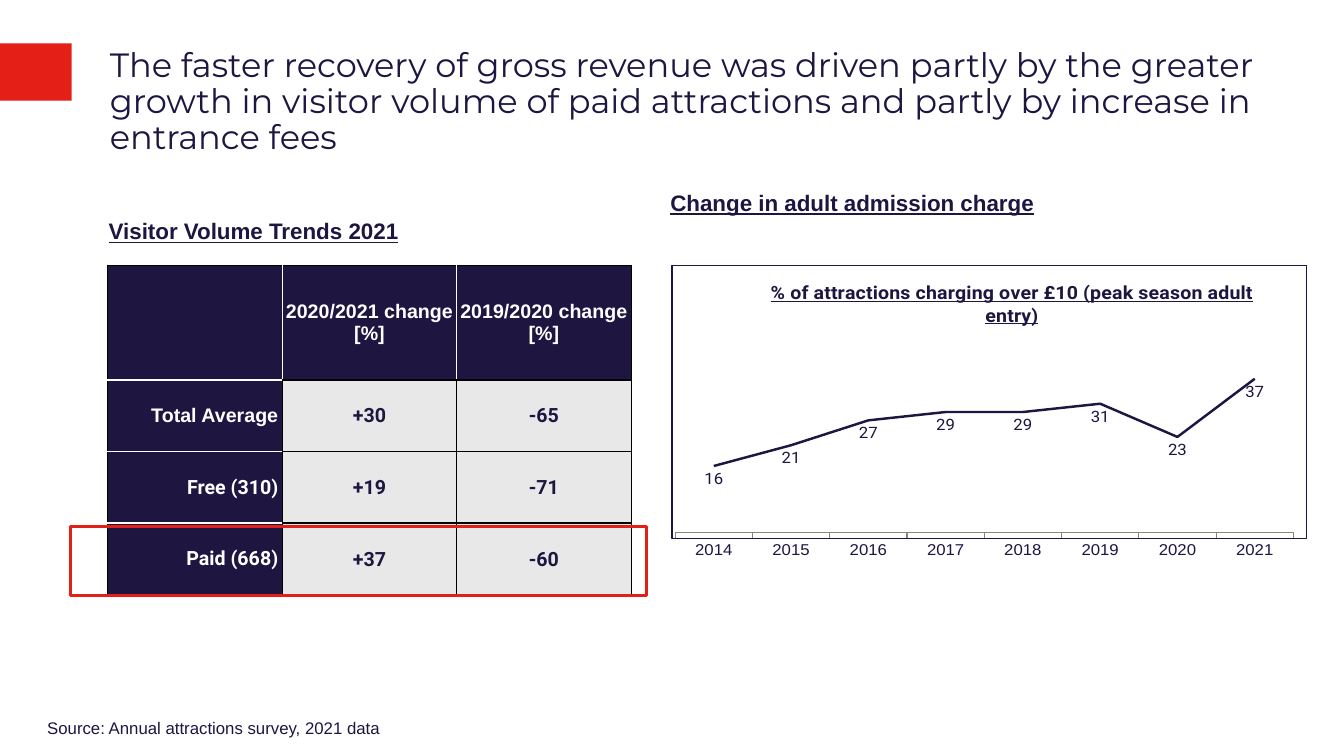
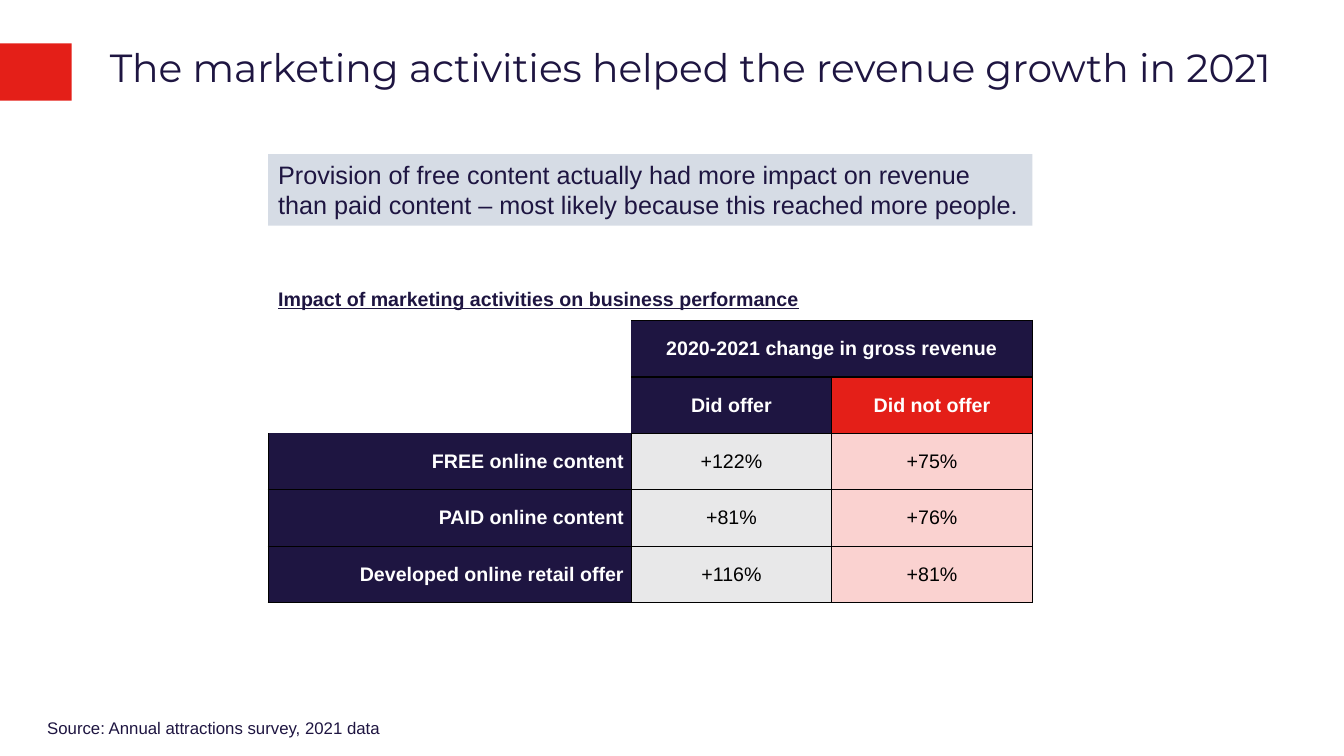
from lxml import etree
from pptx import Presentation
from pptx.chart.data import CategoryChartData
from pptx.dml.color import RGBColor
from pptx.enum.chart import XL_CHART_TYPE, XL_LABEL_POSITION, XL_TICK_MARK
from pptx.enum.shapes import MSO_SHAPE
from pptx.enum.text import MSO_ANCHOR, PP_ALIGN
from pptx.oxml import parse_xml
from pptx.oxml.ns import nsdecls, qn
from pptx.util import Inches, Pt

LEFT, CENTER, RIGHT = PP_ALIGN.LEFT, PP_ALIGN.CENTER, PP_ALIGN.RIGHT
TOP, MIDDLE, BOTTOM = MSO_ANCHOR.TOP, MSO_ANCHOR.MIDDLE, MSO_ANCHOR.BOTTOM
RECTANGLE = MSO_SHAPE.RECTANGLE
LINE_CHART = XL_CHART_TYPE.LINE
BELOW = XL_LABEL_POSITION.BELOW
TICK_OUTSIDE, TICK_NONE = XL_TICK_MARK.OUTSIDE, XL_TICK_MARK.NONE

COLOURS = {
    "navy": "1E1541",
    "red": "E41F18",
    "white": "FFFFFF",
    "black": "000000",
    "grey": "E8E8E9",
    "pink": "FAD2D0",
    "pale blue": "D6DCE5",
    "axis": "868686",
}
CELL_STYLES = {
    "empty": {"fill": None},
    "corner": {"fill": "navy"},
    "head": {"fill": "navy", "colour": "white", "bold": True},
    "red head": {"fill": "red", "colour": "white", "bold": True},
    "side": {"fill": "navy", "colour": "white", "bold": True, "align": RIGHT},
    "strong value": {"fill": "grey", "bold": True, "font": "Roboto"},
    "value": {"fill": "grey", "colour": "black"},
    "pink value": {"fill": "pink", "colour": "black"},
}


def colour_of(name):
    return RGBColor.from_string(COLOURS[name])


def write(frame, text, size=14, font="Arial", colour="navy", bold=False,
          underline=False, align=LEFT, line_spacing=None, before=0, after=0):
    """Fill a text frame, one paragraph for each line of the text."""
    for number, line in enumerate(text.split("\n")):
        paragraph = frame.add_paragraph() if number else frame.paragraphs[0]
        paragraph.alignment = align
        paragraph.line_spacing = line_spacing
        paragraph.space_before, paragraph.space_after = Pt(before), Pt(after)
        run = paragraph.add_run()
        run.text = line
        run.font.name, run.font.size = font, Pt(size)
        run.font.bold, run.font.underline = bold, underline
        run.font.color.rgb = colour_of(colour)


def set_margins(target, margins):
    """Set left, top, right and bottom margins of a text frame or a cell."""
    (target.margin_left, target.margin_top,
     target.margin_right, target.margin_bottom) = map(Inches, margins)


def add_border(cell, side, colour):
    """Draw one side (L, R, T or B) of a cell, or clear it without a colour."""
    properties = cell._tc.get_or_add_tcPr()
    line = etree.SubElement(properties, qn("a:ln" + side), w=str(Pt(1)))
    if colour:
        fill = etree.SubElement(line, qn("a:solidFill"))
        etree.SubElement(fill, qn("a:srgbClr"), val=COLOURS[colour])
    else:
        etree.SubElement(line, qn("a:noFill"))


def set_layout(element, index, **values):
    """Place a chart part by fractions of the chart area."""
    for old in element.findall(qn("c:layout")):
        element.remove(old)
    layout = etree.Element(qn("c:layout"))
    manual = etree.SubElement(layout, qn("c:manualLayout"))
    for name, value in values.items():
        etree.SubElement(manual, qn("c:" + name), val=str(value))
    element.insert(index, layout)


class Deck:
    def __init__(self):
        self.presentation = Presentation()
        self.presentation.slide_width = Inches(13.33)
        self.presentation.slide_height = Inches(7.5)
        self.slide = None

    def new_slide(self, title, title_size, source):
        """Start a slide with its red marker, title and source line."""
        layout = self.presentation.slide_layouts[6]
        self.slide = self.presentation.slides.add_slide(layout)
        self.rectangle(0, 0.43, 0.71, 0.57, fill="red")
        self.text(title, 0.99, 0.43, 12.01, 0.57, size=title_size,
                  font="Montserrat", line_spacing=0.9)
        self.text(source, 0.37, 7.03, 5.9, 0.29, anchor=BOTTOM,
                  margins=(0.1, 0, 0.1, 0), size=12, line_spacing=0.9, before=10)

    def text(self, text, left, top, width, height, anchor=TOP,
             margins=(0.1, 0.05, 0.1, 0.05), **text_format):
        box = self.slide.shapes.add_textbox(
            Inches(left), Inches(top), Inches(width), Inches(height))
        frame = box.text_frame
        frame.word_wrap = True
        frame.vertical_anchor = anchor
        set_margins(frame, margins)
        write(frame, text, **text_format)

    def heading(self, text, left, top, width, height, **text_format):
        self.text(text, left, top, width, height, bold=True, underline=True,
                  **text_format)

    def rectangle(self, left, top, width, height, fill=None, line=None,
                  text=None, **text_format):
        shape = self.slide.shapes.add_shape(
            RECTANGLE, Inches(left), Inches(top), Inches(width), Inches(height))
        shape.shadow.inherit = False
        if fill:
            shape.fill.solid()
            shape.fill.fore_color.rgb = colour_of(fill)
        else:
            shape.fill.background()
        if line:
            shape.line.color.rgb = colour_of(line)
            shape.line.width = Pt(2.25)
        else:
            shape.line.fill.background()
        if text:
            shape.text_frame.word_wrap = True
            shape.text_frame.vertical_anchor = TOP
            write(shape.text_frame, text, **text_format)

    def table(self, left, top, widths, heights, rows, border_rule,
              margins, side_margins):
        """Add a table; each cell is a (text, style name) pair."""
        table = self.slide.shapes.add_table(
            len(heights), len(widths), Inches(left), Inches(top),
            Inches(sum(widths)), Inches(sum(heights))).table
        table.first_row = table.horz_banding = False
        for column, width in zip(table.columns, widths):
            column.width = Inches(width)
        for row, height in zip(table.rows, heights):
            row.height = Inches(height)
        for row, cells in enumerate(rows):
            for column, (text, style) in enumerate(cells):
                cell = table.cell(row, column)
                for side in "LRTB":
                    add_border(cell, side, border_rule(row, column, side))
                text_format = {"align": CENTER, **CELL_STYLES[style]}
                fill = text_format.pop("fill")
                if fill:
                    cell.fill.solid()
                    cell.fill.fore_color.rgb = colour_of(fill)
                else:
                    cell.fill.background()
                cell.vertical_anchor = MIDDLE
                set_margins(cell, side_margins if style == "side" else margins)
                if text:
                    write(cell.text_frame, text, **text_format)
        return table

    def line_chart(self, left, top, width, height, title, categories, values):
        data = CategoryChartData()
        data.categories = categories
        data.add_series("Series 1", values)
        chart = self.slide.shapes.add_chart(
            LINE_CHART, Inches(left), Inches(top), Inches(width),
            Inches(height), data).chart
        chart.has_legend = False
        chart.font.name, chart.font.size = "Arial", Pt(18)
        chart.font.color.rgb = colour_of("black")
        write(chart.chart_title.text_frame, title, font="Roboto", bold=True,
              underline=True, align=CENTER)
        set_layout(chart.chart_title._element, 1, xMode="edge", yMode="edge",
                   x=0.15, y=0.04)
        set_layout(chart.element.find(".//" + qn("c:plotArea")), 0,
                   layoutTarget="inner", xMode="edge", yMode="edge",
                   x=0.005, y=0.217, w=0.975, h=0.76)
        chart.element.find(qn("c:chart")).addnext(parse_xml(
            f'<c:spPr {nsdecls("c", "a")}>'
            f'<a:solidFill><a:srgbClr val="{COLOURS["white"]}"/></a:solidFill>'
            f'<a:ln w="{Pt(0.75)}"><a:solidFill>'
            f'<a:srgbClr val="{COLOURS["navy"]}"/></a:solidFill></a:ln></c:spPr>'))

        category_axis, value_axis = chart.category_axis, chart.value_axis
        category_axis.reverse_order = True
        category_axis.major_tick_mark = TICK_OUTSIDE
        category_axis.minor_tick_mark = TICK_NONE
        category_axis.format.line.color.rgb = colour_of("axis")
        category_axis.tick_labels.font.size = Pt(12)
        category_axis.tick_labels.font.color.rgb = colour_of("navy")
        value_axis.visible = False
        value_axis.has_major_gridlines = False
        value_axis.minimum_scale, value_axis.maximum_scale = 0, 50

        plot = chart.plots[0]
        plot.vary_by_categories = False
        series = plot.series[0]
        series.smooth = False
        series.format.line.color.rgb = colour_of("navy")
        series.format.line.width = Pt(1.75)
        labels = series.data_labels
        labels.show_value = True
        labels.position = BELOW
        labels.font.name, labels.font.size = "Roboto", Pt(12)
        labels.font.color.rgb = colour_of("navy")


def volume_border(row, column, side):
    """White between the headings, black elsewhere."""
    in_head = row == 0 and (side, column) in (("R", 0), ("L", 1), ("R", 1), ("L", 2))
    in_side = column == 0 and (side == "T" and row > 0 or side == "B" and row < 3)
    return "white" if in_head or in_side else "black"


def impact_border(row, column, side):
    """Black, except around the open top left corner."""
    in_corner = column == 0 and row < 2
    beside = column == 1 and row < 2 and side == "L"
    below = column == 0 and row == 2 and side == "T"
    return None if in_corner or beside or below else "black"


def add_volume_slide(deck, source):
    deck.new_slide(
        "The faster recovery of gross revenue was driven partly by the greater "
        "growth in visitor volume of paid attractions and partly by increase in "
        "entrance fees", 24, source)
    deck.heading("Visitor Volume Trends 2021", 0.98, 2.11, 5.2, 0.46,
                 size=16, after=6)
    rows = [[("", "corner"), ("2020/2021 change\n[%]", "head"),
             ("2019/2020 change\n[%]", "head")]]
    for name, recent, earlier in (("Total Average", "+30", "-65"),
                                  ("Free (310)", "+19", "-71"),
                                  ("Paid (668)", "+37", "-60")):
        rows.append([(name, "side"), (recent, "strong value"),
                     (earlier, "strong value")])
    table = deck.table(1.07, 2.63, [1.73] * 3, [1.14] + [0.71] * 3, rows,
                       volume_border, (0.01, 0.01, 0.01, 0), [0.04] * 4)
    for row in (2, 3):
        run = table.cell(row, 0).text_frame.paragraphs[0].runs[0]
        run.font.name = "Roboto"
    deck.line_chart(
        6.66, 2.63, 6.3, 2.91,
        "% of attractions charging over £10 (peak season adult entry)",
        [str(year) for year in range(2021, 2013, -1)],
        (37, 23, 31, 29, 29, 27, 21, 16))
    deck.heading("Change in adult admission charge", 6.55, 1.9, 6.11, 0.24,
                 size=16, line_spacing=Pt(14), before=4, after=4)
    deck.rectangle(0.7, 5.22, 5.71, 0.69, line="red")


def add_impact_slide(deck, source):
    left, width = 2.66, 7.58
    deck.new_slide("The marketing activities helped the revenue growth in 2021",
                   28, source)
    deck.rectangle(
        left, 1.53, width, 0.71, fill="pale blue", size=18,
        text="Provision of free content actually had more impact on revenue than "
             "paid content – most likely because this reached more people.")
    deck.heading("Impact of marketing activities on business performance",
                 left, 2.67, width, 0.46, anchor=BOTTOM,
                 line_spacing=Pt(14), before=4, after=4)
    rows = [[("", "empty"), ("2020-2021 change in gross revenue", "head"),
             ("", "corner")],
            [("", "empty"), ("Did offer", "head"), ("Did not offer", "red head")]]
    for name, offered, not_offered in (
            ("FREE online content", "+122%", "+75%"),
            ("PAID online content", "+81%", "+76%"),
            ("Developed online retail offer", "+116%", "+81%")):
        rows.append([(name, "side"), (offered, "value"),
                     (not_offered, "pink value")])
    margins = (0.07, 0.03, 0.07, 0.03)
    table = deck.table(left, 3.18, [3.6, 1.99, 1.99], [0.56] * 5, rows,
                       impact_border, margins, margins)
    table.cell(0, 1).merge(table.cell(0, 2))


def main():
    deck = Deck()
    source = "Source: Annual attractions survey, 2021 data"
    add_volume_slide(deck, source)
    add_impact_slide(deck, source)
    deck.presentation.save("out.pptx")


if __name__ == "__main__":
    main()
